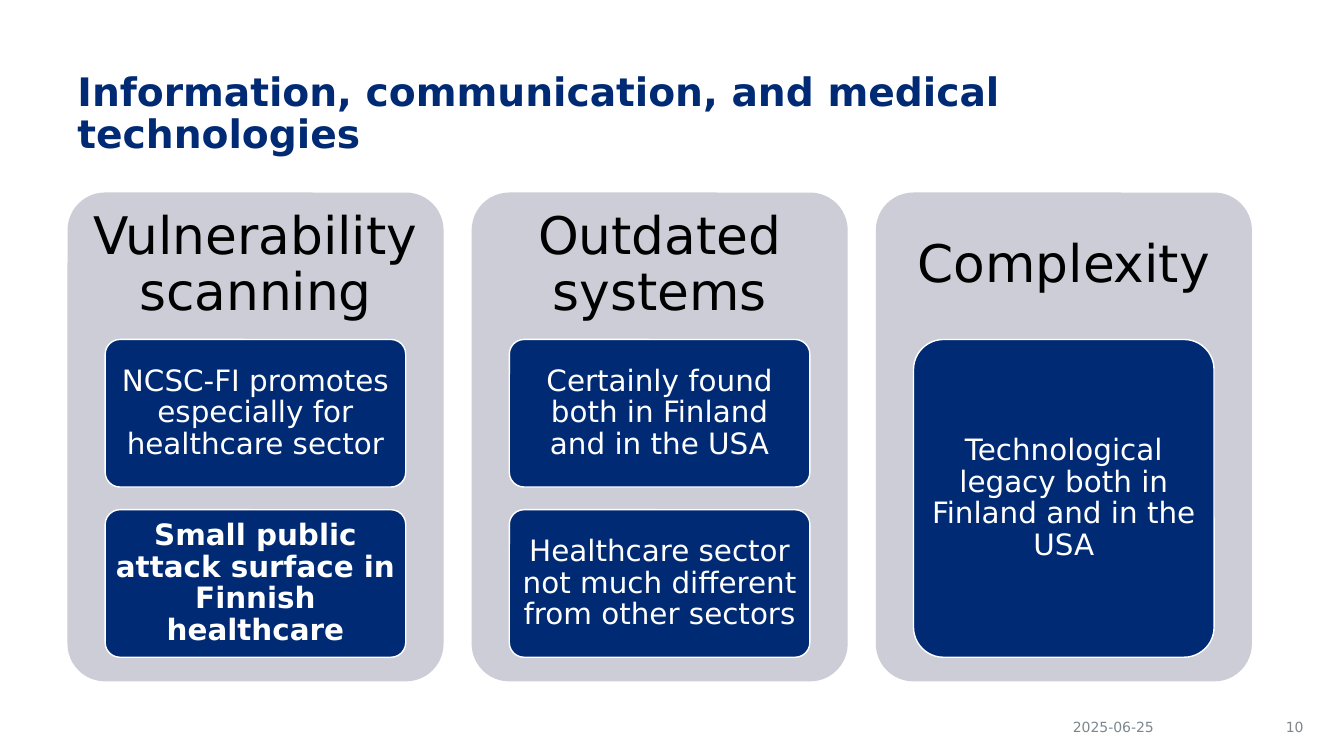
from pptx import Presentation
from pptx.dml.color import RGBColor
from pptx.enum.shapes import MSO_SHAPE
from pptx.enum.text import MSO_ANCHOR, PP_ALIGN
from pptx.util import Pt

COLOURS = {
    "navy": "002B74",
    "panel": "CCCDD6",
    "black": "000000",
    "white": "FFFFFF",
    "grey": "7C878E",
}
FONT = "DejaVu Sans"

# Column geometry, in points
LEFT, TOP, WIDTH, HEIGHT, PITCH = 48.24, 137.5, 268.6, 349.2, 288.7
HEADING_HEIGHT = 105
CARD_INSET, CARD_WIDTH = 26.9, 214.7
CARDS_TOP, CARDS_HEIGHT, CARD_GAP = 242.5, 227, 16.2

# Heading, then (text, bold) for each card
COLUMNS = [
    ("Vulnerability scanning", [
        ("NCSC-FI promotes especially for healthcare sector", False),
        ("Small public attack surface in Finnish healthcare", True),
    ]),
    ("Outdated systems", [
        ("Certainly found both in Finland and in the USA", False),
        ("Healthcare sector not much different from other sectors", False),
    ]),
    ("Complexity", [
        ("Technological legacy both in Finland and in the USA", False),
    ]),
]


def colour(name):
    return RGBColor.from_string(COLOURS[name])


def set_text(shape, text, size, ink, bold=False, align=PP_ALIGN.CENTER,
             anchor=MSO_ANCHOR.MIDDLE, spacing=0.9, margins=(7.2, 3.6)):
    across, down = margins
    frame = shape.text_frame
    frame_format = {
        "word_wrap": True, "vertical_anchor": anchor,
        "margin_left": Pt(across), "margin_right": Pt(across),
        "margin_top": Pt(down), "margin_bottom": Pt(down),
    }
    for key, value in frame_format.items():
        setattr(frame, key, value)
    para = frame.paragraphs[0]
    para.alignment = align
    para.line_spacing = spacing
    span = para.add_run()
    span.text = text
    for key, value in {"name": FONT, "size": Pt(size), "bold": bold}.items():
        setattr(span.font, key, value)
    span.font.color.rgb = colour(ink)


def add_text(page, area, text, size, ink, **options):
    box = page.shapes.add_textbox(*map(Pt, area))
    set_text(box, text, size, ink, **options)


def add_rounded(page, area, fill, line=None):
    shape = page.shapes.add_shape(MSO_SHAPE.ROUNDED_RECTANGLE, *map(Pt, area))
    shape.adjustments[0] = 0.1
    shape.shadow.inherit = False
    shape.fill.solid()
    shape.fill.fore_color.rgb = colour(fill)
    if line:
        shape.line.color.rgb = colour(line)
        shape.line.width = Pt(1)
    else:
        shape.line.fill.background()
    return shape


def add_column(page, left, heading, cards):
    add_rounded(page, (left, TOP, WIDTH, HEIGHT), "panel")
    add_text(page, (left, TOP, WIDTH, HEADING_HEIGHT), heading, 37, "black",
             margins=(10.8, 10.8))
    # Cards share the height below the heading
    height = (CARDS_HEIGHT + CARD_GAP) / len(cards) - CARD_GAP
    for row, (text, bold) in enumerate(cards):
        top = CARDS_TOP + row * (height + CARD_GAP)
        card = add_rounded(page, (left + CARD_INSET, top, CARD_WIDTH, height),
                           "navy", "white")
        set_text(card, text, 21, "white", bold=bold, margins=(4.2, 3.1))


def main():
    deck = Presentation()
    deck.slide_width, deck.slide_height = Pt(960), Pt(540)
    page = deck.slides.add_slide(deck.slide_layouts[6])

    # Title
    add_text(page, (48.24, 48.24, 846, 87),
             "Information, communication, and medical technologies", 28, "navy",
             bold=True, align=PP_ALIGN.LEFT, anchor=MSO_ANCHOR.TOP)

    # Columns
    for index, (heading, cards) in enumerate(COLUMNS):
        add_column(page, LEFT + index * PITCH, heading, cards)

    # Footer: date and page number
    add_text(page, (721.4, 509, 147.6, 20.2), "2025-06-25", 10, "grey", spacing=1.0)
    add_text(page, (890, 509, 48.2, 20.2), "10", 10, "grey",
             align=PP_ALIGN.RIGHT, spacing=1.0)

    deck.save("out.pptx")


if __name__ == "__main__":
    main()
